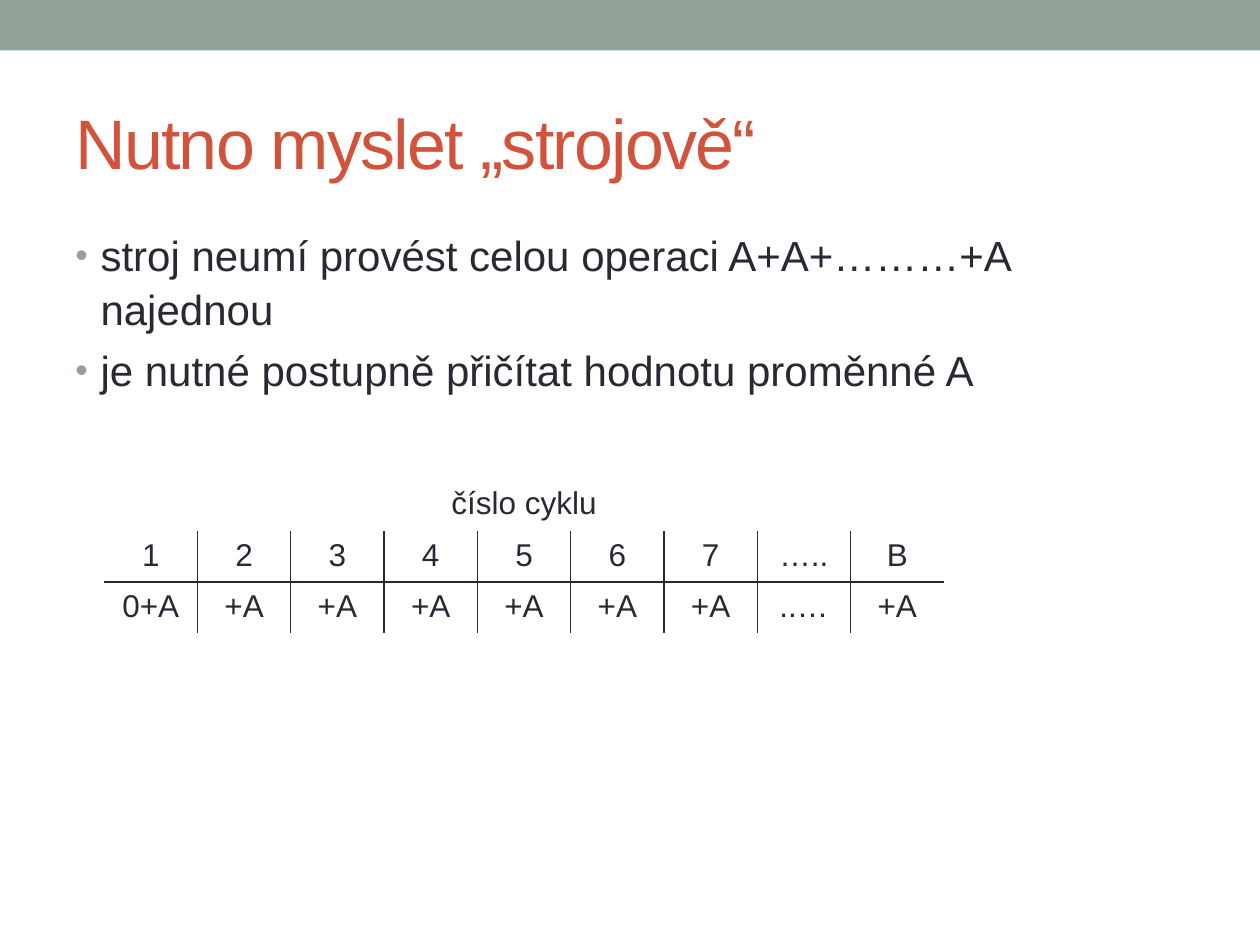
"""Build the slide about repeated addition, with a table of cycles."""
from lxml.etree import SubElement
from pptx import Presentation
from pptx.dml.color import RGBColor
from pptx.enum.shapes import MSO_SHAPE
from pptx.enum.text import MSO_ANCHOR, PP_ALIGN
from pptx.oxml.ns import qn
from pptx.util import Pt

SAGE = RGBColor(0x93, 0xA2, 0x99)
BRICK = RGBColor(0xD2, 0x53, 0x3C)
INK = RGBColor(0x29, 0x29, 0x34)
NO_STYLE_NO_GRID = "{2D5ABB26-0587-4C30-8999-92F81FD0307C}"


def add_text(paragraph, text, size, color):
    run = paragraph.add_run()
    run.text = text
    run.font.name = "Arial"
    run.font.size = Pt(size)
    run.font.color.rgb = color
    return run


def add_border(cell, side):
    line = SubElement(cell._tc.get_or_add_tcPr(), qn(f"a:ln{side}"), w=str(Pt(1)))
    fill = SubElement(line, qn("a:solidFill"))
    SubElement(fill, qn("a:srgbClr"), val=str(INK))


prs = Presentation()
prs.slide_width, prs.slide_height = Pt(720), Pt(540)
slide = prs.slides.add_slide(prs.slide_layouts[6])

top_band = slide.shapes.add_shape(MSO_SHAPE.RECTANGLE, 0, 0, Pt(720), Pt(28.8))
top_band.shadow.inherit = False
top_band.fill.solid()
top_band.fill.fore_color.rgb = SAGE
top_band.line.fill.background()

title = slide.shapes.add_textbox(Pt(36), Pt(42), Pt(648), Pt(78)).text_frame
title.word_wrap = True
title.vertical_anchor = MSO_ANCHOR.MIDDLE
heading = add_text(title.paragraphs[0], "Nutno myslet „strojově“", 40, BRICK)
heading._r.get_or_add_rPr().set("spc", "-100")

body = slide.shapes.add_textbox(Pt(36), Pt(126), Pt(648), Pt(384)).text_frame
body.word_wrap = True
points = [
    "stroj neumí provést celou operaci A+A+………+A najednou",
    "je nutné postupně přičítat hodnotu proměnné A",
]
for index, point in enumerate(points):
    paragraph = body.add_paragraph() if index else body.paragraphs[0]
    paragraph.space_before = Pt(4.8)
    paragraph.line_spacing = 1.06
    add_text(paragraph, point, 24, INK)
    properties = paragraph._p.get_or_add_pPr()
    properties.set("marL", str(Pt(14.4)))
    properties.set("indent", str(Pt(-14.4)))
    bullet_color = SubElement(properties, qn("a:buClr"))
    SubElement(bullet_color, qn("a:srgbClr"), val=str(SAGE))
    SubElement(properties, qn("a:buSzPct"), val="85000")
    SubElement(properties, qn("a:buFont"), typeface="Arial")
    SubElement(properties, qn("a:buChar"), char="•")

cycles = ["1", "2", "3", "4", "5", "6", "7", "…..", "B"]
additions = ["0+A"] + ["+A"] * 6 + ["..…", "+A"]
rows = [["číslo cyklu"], cycles, additions]
last = len(cycles) - 1
frame = slide.shapes.add_table(3, len(cycles), Pt(59.5), Pt(274.3), Pt(480), Pt(87.6))
table = frame.table
table.first_row = table.horz_banding = False
for style in frame._element.iter(qn("a:tableStyleId")):
    style.text = NO_STYLE_NO_GRID
table.cell(0, 0).merge(table.cell(0, last))

for row, texts in enumerate(rows):
    for column, text in enumerate(texts):
        cell = table.cell(row, column)
        paragraph = cell.text_frame.paragraphs[0]
        paragraph.alignment = PP_ALIGN.CENTER
        add_text(paragraph, text, 18, INK)
        if row and column > 0:
            add_border(cell, "L")
        if row and column < last:
            add_border(cell, "R")
        if row:
            add_border(cell, "B" if row == 1 else "T")
        cell.fill.background()

prs.save("out.pptx")
